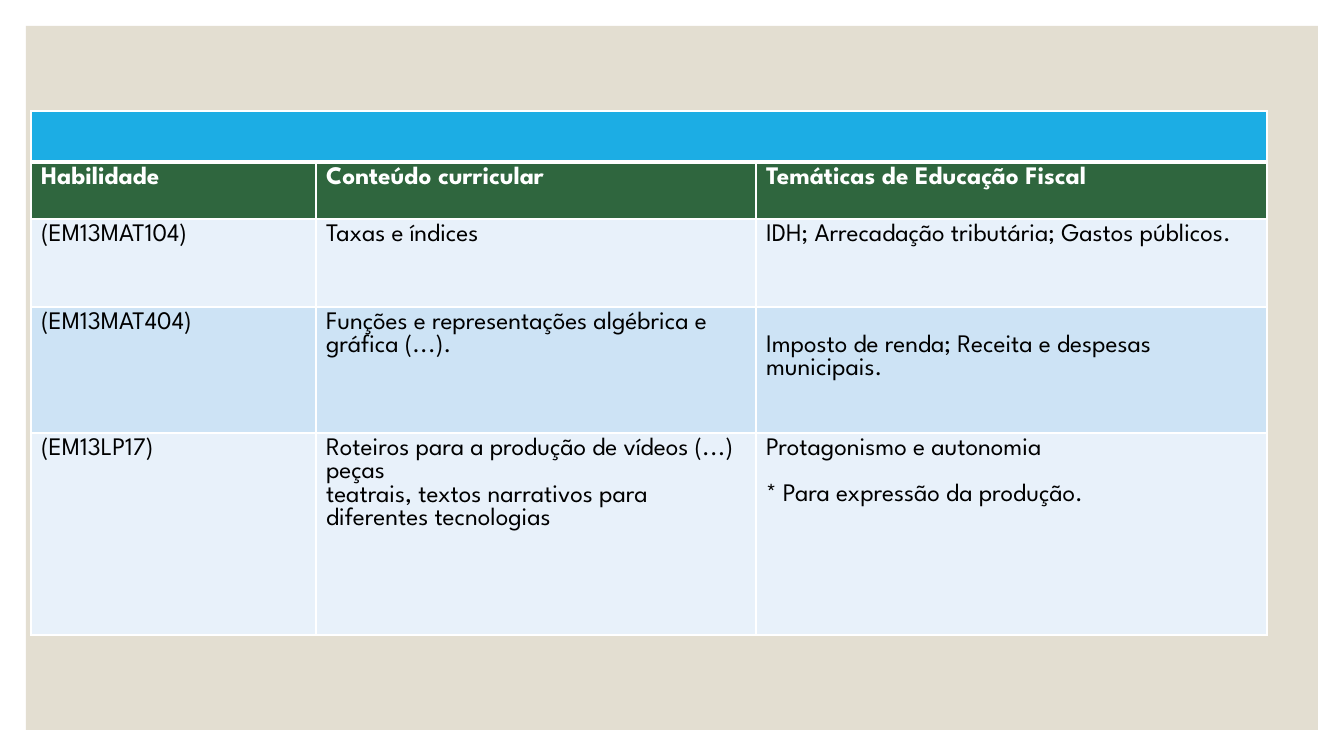
from lxml import etree
from pptx import Presentation
from pptx import util as u
from pptx.dml.color import RGBColor
from pptx.enum import shapes
from pptx.oxml.ns import qn

PX = 914400 / 100.8
FONT = "League Spartan"
WHITE, BLACK = "FFFFFF", "000000"
SAND, BLUE, GREEN = "E3DED1", "1CADE4", "2F663E"
PALE, SKY = "E8F1FA", "CDE3F5"

COLS = [285, 440, 511]
# height, fill, text colour, bold, cells (each a list of paragraphs)
ROWS = [
    (51, BLUE, WHITE, True, [[], [], []]),
    (57, GREEN, WHITE, True, [
        ["Habilidade"], ["Conteúdo curricular"],
        ["Temáticas de Educação Fiscal"]]),
    (88, PALE, BLACK, False, [
        ["(EM13MAT104)"], ["Taxas e índices"],
        ["IDH; Arrecadação tributária; Gastos públicos."]]),
    (126, SKY, BLACK, False, [
        ["(EM13MAT404)"],
        ["Funções e representações algébrica e gráfica (...)."],
        ["Imposto de renda; Receita e despesas municipais."]]),
    (202, PALE, BLACK, False, [
        ["(EM13LP17)"],
        ["Roteiros para a produção de vídeos (...) peças",
         "teatrais, textos narrativos para diferentes tecnologias"],
        ["Protagonismo e autonomia", "* Para expressão da produção."]]),
]
LOWERED = (3, 2)  # cell whose text starts one line down
SPACED = (4, 2)   # cell with a line of space between paragraphs
LINE = 23


def px(n):
    return u.Emu(round(n * PX))


def rgb(code):
    return RGBColor.from_string(code)


def paint(item, code):
    item.fill.solid()
    item.fill.fore_color.rgb = rgb(code)


def edge(cell, widths):
    """Draw white borders; widths maps a side (L, R, T, B) to points."""
    props = cell._tc.get_or_add_tcPr()
    for side, width in widths.items():
        line = etree.SubElement(props, qn("a:ln" + side), w=str(u.Pt(width)))
        fill = etree.SubElement(line, qn("a:solidFill"))
        etree.SubElement(fill, qn("a:srgbClr"), val=WHITE)


def write(cell, paras, code, bold, gap):
    frame = cell.text_frame
    for i, words in enumerate(paras):
        para = frame.paragraphs[0] if i == 0 else frame.add_paragraph()
        if i:
            para.space_before = px(gap)
        run = para.add_run()
        run.text = words
        font = run.font
        font.name, font.size, font.bold = FONT, u.Pt(18), bold
        font.color.rgb = rgb(code)


def main():
    deck = Presentation()
    deck.slide_width, deck.slide_height = px(1344), px(756)
    slide = deck.slides.add_slide(deck.slide_layouts[6])

    panel = slide.shapes.add_shape(
        shapes.MSO_SHAPE.RECTANGLE, px(26), px(26), px(1292), px(704))
    panel.shadow.inherit = False
    paint(panel, SAND)
    panel.line.fill.background()

    high = sum(row[0] for row in ROWS)
    table = slide.shapes.add_table(
        len(ROWS), len(COLS), px(31), px(111), px(sum(COLS)), px(high)).table
    table.first_row = table.horz_banding = False
    for col, width in zip(table.columns, COLS):
        col.width = px(width)

    for r, (height, fill, code, bold, cells) in enumerate(ROWS):
        table.rows[r].height = px(height)
        for c, paras in enumerate(cells):
            cell = table.cell(r, c)
            edge(cell, {"L": 1, "R": 1, "T": 3 if r == 1 else 1,
                        "B": 3 if r == 0 else 1})
            paint(cell, fill)
            if (r, c) == LOWERED:
                cell.margin_top = px(5 + LINE)
            write(cell, paras, code, bold, LINE if (r, c) == SPACED else 0)
    table.cell(0, 0).merge(table.cell(0, len(COLS) - 1))

    deck.save("out.pptx")


if __name__ == "__main__":
    main()
